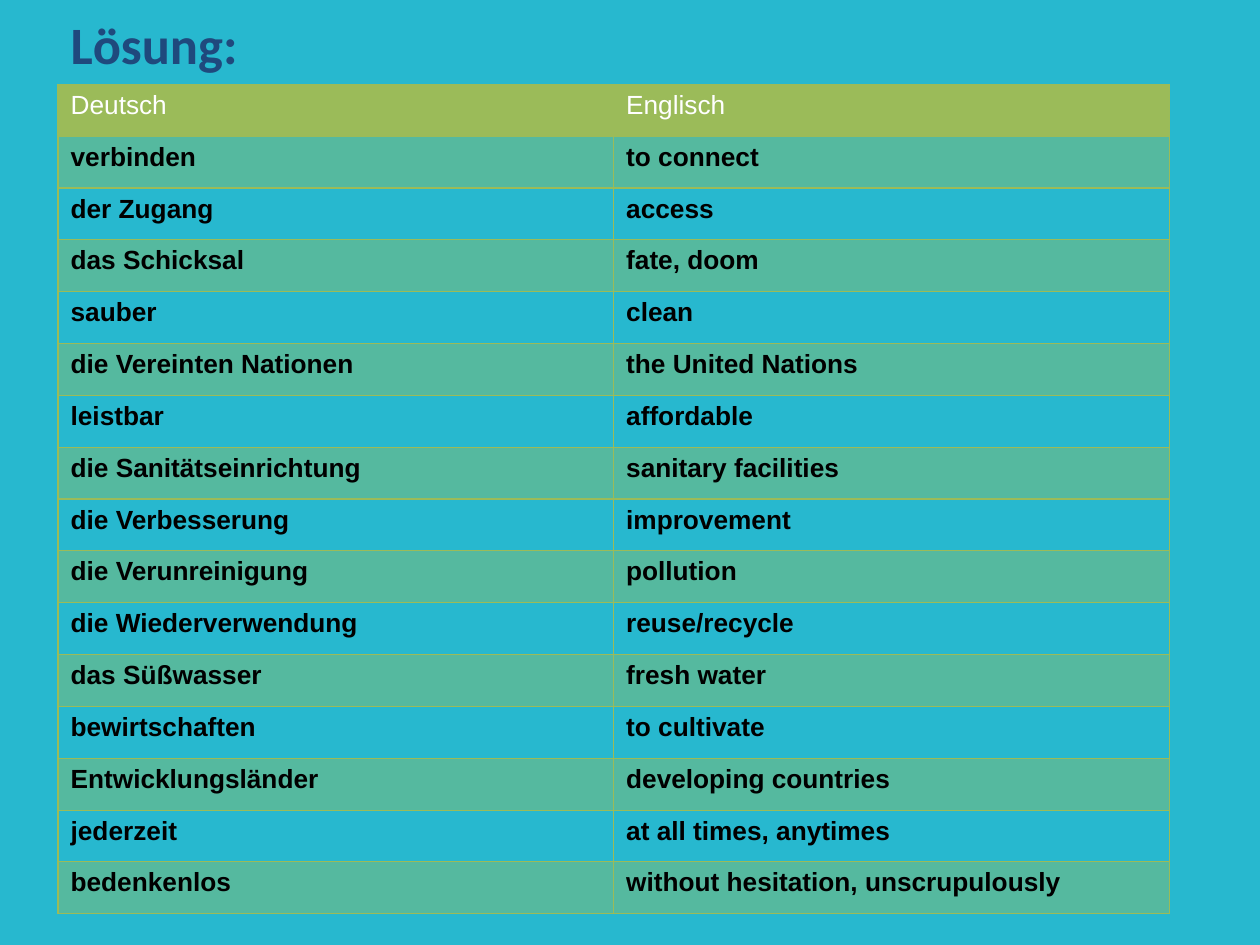
from lxml import etree
from pptx import Presentation
from pptx import util as u
from pptx.dml.color import RGBColor
from pptx.enum import text
from pptx.oxml import ns

COLORS = {
    "background": "27B8CF",
    "title": "1F497D",
    "green": "9BBB59",
    "header_text": "FFFFFF",
    "body_text": "000000",
}

VOCABULARY = [
    ("Deutsch", "Englisch"),
    ("verbinden", "to connect"),
    ("der Zugang", "access"),
    ("das Schicksal", "fate, doom"),
    ("sauber", "clean"),
    ("die Vereinten Nationen", "the United Nations"),
    ("leistbar", "affordable"),
    ("die Sanitätseinrichtung", "sanitary facilities"),
    ("die Verbesserung", "improvement"),
    ("die Verunreinigung", "pollution"),
    ("die Wiederverwendung", "reuse/recycle"),
    ("das Süßwasser", "fresh water"),
    ("bewirtschaften", "to cultivate"),
    ("Entwicklungsländer", "developing countries"),
    ("jederzeit", "at all times, anytimes"),
    ("bedenkenlos", "without hesitation, unscrupulously"),
]


def color(name):
    return RGBColor.from_string(COLORS[name])


def set_alpha(parent, percent):
    for element in parent.iter(ns.qn("a:srgbClr")):
        etree.SubElement(element, ns.qn("a:alpha"), val=str(percent * 1000))


def add_borders(cell, inner_side):
    properties = cell._tc.get_or_add_tcPr()
    for side in ("lnL", "lnR", "lnT", "lnB"):
        line = etree.SubElement(properties, ns.qn(f"a:{side}"), w=str(u.Pt(0.75)))
        fill = etree.SubElement(line, ns.qn("a:solidFill"))
        etree.SubElement(fill, ns.qn("a:srgbClr"), val=COLORS["green"])
        if side == inner_side:
            set_alpha(line, 40)


def format_cell(cell, content, row, column):
    header = row == 0
    add_borders(cell, "lnR" if column == 0 else "lnL")
    if header or row % 2:
        cell.fill.solid()
        cell.fill.fore_color.rgb = color("green")
        if not header:
            set_alpha(cell._tc.tcPr.find(ns.qn("a:solidFill")), 40)
    else:
        cell.fill.background()
    cell.text = content
    font = cell.text_frame.paragraphs[0].font
    font.name = "Arial"
    font.size = u.Pt(15)
    font.bold = not header
    font.color.rgb = color("header_text" if header else "body_text")


def add_title(slide, left, top, width, height):
    title = slide.shapes.title
    title.left, title.top, title.width, title.height = left, top, width, height
    frame = title.text_frame
    frame.text = "Lösung:"
    frame.auto_size = text.MSO_AUTO_SIZE.NONE
    frame.vertical_anchor = text.MSO_ANCHOR.MIDDLE
    paragraph = frame.paragraphs[0]
    paragraph.alignment = text.PP_ALIGN.LEFT
    paragraph.font.name = "Calibri"
    paragraph.font.size = u.Pt(30)
    paragraph.font.bold = True
    paragraph.font.color.rgb = color("title")


def add_vocabulary(slide, left, top, width, height):
    table = slide.shapes.add_table(
        len(VOCABULARY), 2, left, top, width, height
    ).table
    table.horz_banding = False
    for row, pair in enumerate(VOCABULARY):
        for column, content in enumerate(pair):
            format_cell(table.cell(row, column), content, row, column)


def main():
    presentation = Presentation()
    presentation.slide_width = u.Cm(25.4)
    presentation.slide_height = u.Cm(19.05)
    slide = presentation.slides.add_slide(presentation.slide_layouts[5])
    slide.background.fill.solid()
    slide.background.fill.fore_color.rgb = color("background")
    add_title(slide, u.Cm(1.17), u.Cm(0.05), u.Cm(4.14), u.Cm(1.65))
    add_vocabulary(slide, u.Cm(1.17), u.Cm(1.7), u.Cm(22.4), u.Cm(16.72))
    presentation.save("out.pptx")


if __name__ == "__main__":
    main()
